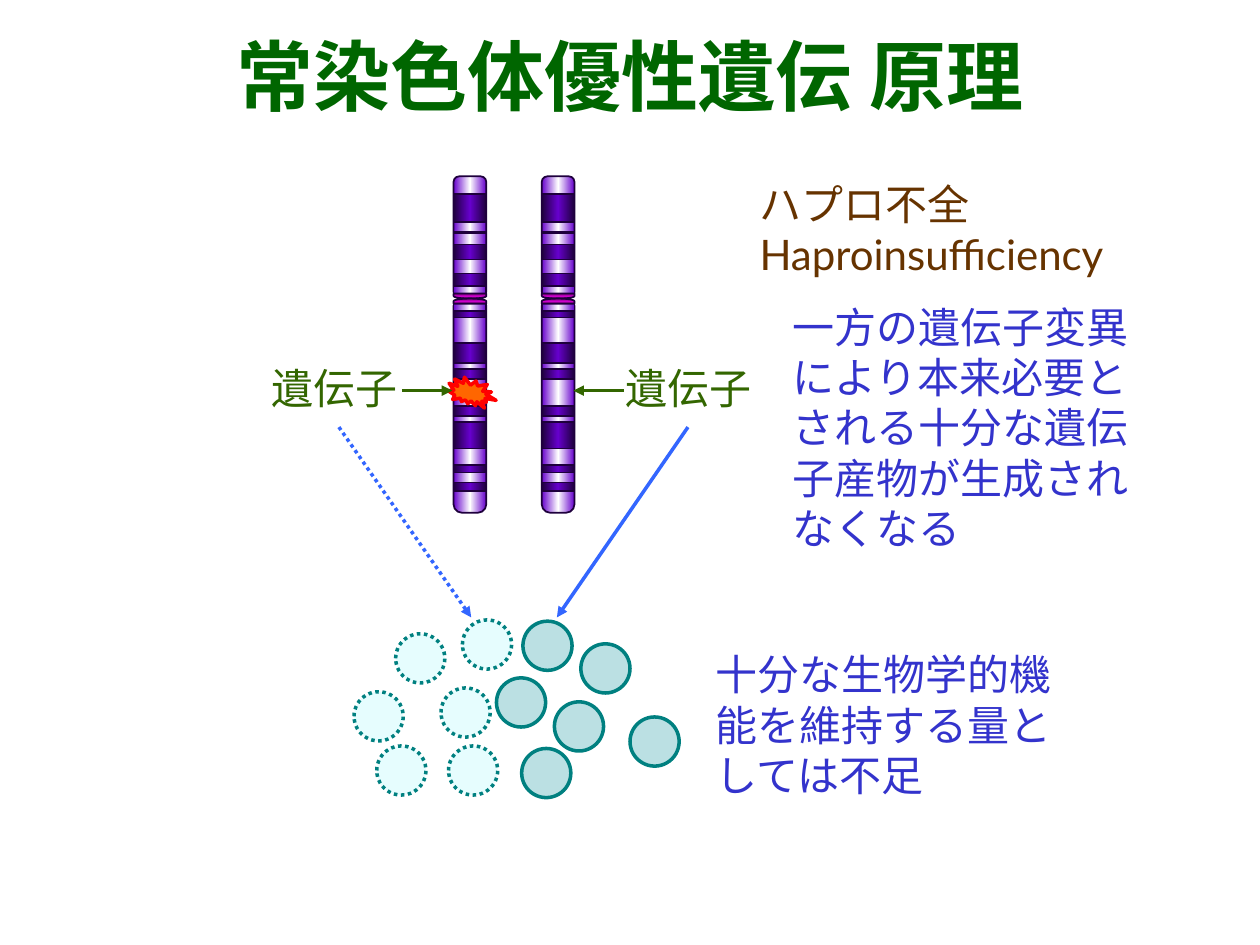
from copy import deepcopy

from lxml import etree
from pptx import Presentation
from pptx import util as u
from pptx.dml.color import RGBColor
from pptx.enum import dml, shapes, text
from pptx.oxml.ns import qn

Inches = u.Inches
SHAPE = shapes.MSO_SHAPE

TITLE_GREEN = RGBColor(0x00, 0x66, 0x00)
GENE_GREEN = RGBColor(0x33, 0x66, 0x00)
BROWN = RGBColor(0x66, 0x33, 0x00)
BLUE = RGBColor(0x33, 0x33, 0xCC)
ARROW_BLUE = RGBColor(0x33, 0x66, 0xFF)
VIOLET = RGBColor(0x66, 0x00, 0xCC)
WHITE = RGBColor(0xFF, 0xFF, 0xFF)
DARK = RGBColor(0x1E, 0x00, 0x3C)
PLUM = RGBColor(0x66, 0x00, 0x66)
MAGENTA = RGBColor(0xCC, 0x00, 0xCC)
ORANGE = RGBColor(0xFF, 0x66, 0x00)
RED = RGBColor(0xFF, 0x00, 0x00)
TEAL = RGBColor(0x00, 0x80, 0x80)
PRODUCT = RGBColor(0xBB, 0xE0, 0xE3)
MISSING = RGBColor(0xE6, 0xFD, 0xFE)

LIGHT_BAND = (VIOLET, WHITE)
DARK_BAND = (DARK, VIOLET)
CENTROMERE = (PLUM, MAGENTA)

CHROMOSOME_WIDTH = 0.26
LIGHT_BANDS = [(2.4, 0.09), (2.24, 0.09)]
DARK_BANDS = [
    (2.17, 0.1), (2.47, 0.05), (2.72, 0.16), (1.94, 0.12), (1.84, 0.01),
    (1.54, 0.22), (2.93, 0.08), (3.22, 0.08), (3.35, 0.21), (3.69, 0.06),
    (3.83, 0.07),
]
PRODUCTS = [(4.15, 4.93), (3.94, 5.38), (4.14, 5.94), (4.4, 5.57), (4.61, 5.11), (5, 5.69)]
MISSING_PRODUCTS = [(3.67, 4.92), (2.81, 5.49), (3.5, 5.46), (3.56, 5.92), (3.14, 5.03), (2.99, 5.92)]


class SlideBuilder:
    """Hold the slide and its style, and draw each kind of element on it."""

    font = "Noto Sans CJK JP"
    size = 24
    line_width = 2

    def __init__(self, s):
        self.s = s

    def run(self, p, words, color, font=None, size=None, bold=False):
        r = p.add_run()
        r.text = words
        r.font.name = font or self.font
        r.font.size = u.Pt(size or self.size)
        r.font.bold = bold
        r.font.color.rgb = color
        ea = etree.SubElement(r.font._element, qn("a:ea"))
        ea.set("typeface", self.font)

    def title(self, box, words):
        sp = self.s.shapes.title
        sp.left, sp.top, sp.width, sp.height = map(Inches, box)
        tf = sp.text_frame
        tf.auto_size = text.MSO_AUTO_SIZE.NONE
        tf.vertical_anchor = text.MSO_ANCHOR.MIDDLE
        p = tf.paragraphs[0]
        p.alignment = text.PP_ALIGN.CENTER
        self.run(p, words, TITLE_GREEN, size=44, bold=True)

    def textbox(self, box, lines, color, wrap=True, anchor=text.MSO_ANCHOR.MIDDLE):
        tf = self.s.shapes.add_textbox(*map(Inches, box)).text_frame
        tf.word_wrap = wrap
        tf.auto_size = text.MSO_AUTO_SIZE.SHAPE_TO_FIT_TEXT
        tf.vertical_anchor = anchor
        for i, (words, font) in enumerate(lines):
            p = tf.add_paragraph() if i else tf.paragraphs[0]
            self.run(p, words, color, font)

    def shape(self, kind, box, line, width=None, parent=None, rotation=0):
        sp = (parent or self.s).shapes.add_shape(kind, *map(Inches, box))
        sp.shadow.inherit = False
        sp.rotation = rotation
        sp.line.color.rgb = line
        sp.line.width = u.Pt(width or self.line_width)
        return sp

    def solid(self, kind, box, fill, line, dash=None, rotation=0):
        sp = self.shape(kind, box, line, rotation=rotation)
        sp.fill.solid()
        sp.fill.fore_color.rgb = fill
        if dash:
            sp.line.dash_style = dash

    def band(self, group, kind, box, colors, rotation=0, corner=None):
        sp = self.shape(kind, box, DARK, 1, group, rotation)
        if corner:
            sp.adjustments[0] = corner
        sp.fill.gradient()
        sp.fill.gradient_angle = 0
        stops = sp._element.spPr.find(qn("a:gradFill")).find(qn("a:gsLst"))
        stops.insert(1, deepcopy(stops[0]))
        edge, middle = colors
        for stop, color, place in zip(sp.fill.gradient_stops, (edge, middle, edge), (0, 0.5, 1)):
            stop.color.rgb = color
            stop.position = place

    def chromosome(self, x):
        group = self.s.shapes.add_group_shape()
        w = CHROMOSOME_WIDTH
        for y, h, corner in [(1.4, 0.96, 0.167), (2.36, 1.71, 0.26)]:
            self.band(group, SHAPE.ROUNDED_RECTANGLE, (x, y, w, h), LIGHT_BAND, corner=corner)
        for bands, colors in [(LIGHT_BANDS, LIGHT_BAND), (DARK_BANDS, DARK_BAND)]:
            for y, h in bands:
                self.band(group, SHAPE.RECTANGLE, (x, y, w, h), colors)
        for y, rotation in [(2.22, 90), (2.26, 270)]:
            self.band(group, SHAPE.FLOWCHART_DELAY, (x + 0.11, y, 0.04, w), CENTROMERE, rotation)

    def arrow(self, start, end, color, dash=None):
        c = self.s.shapes.add_connector(
            shapes.MSO_CONNECTOR.STRAIGHT, *map(Inches, (*start, *end)))
        c.line.color.rgb = color
        c.line.width = u.Pt(self.line_width)
        if dash:
            c.line.dash_style = dash
        spPr = c._element.spPr
        etree.SubElement(spPr.find(qn("a:ln")), qn("a:tailEnd")).set("type", "triangle")
        etree.SubElement(spPr, qn("a:effectLst"))

    def products(self, places, fill, dash=None):
        for x, y in places:
            self.solid(SHAPE.OVAL, (x, y, 0.39, 0.39), fill, TEAL, dash)


def main():
    prs = Presentation()
    prs.slide_width, prs.slide_height = Inches(10), Inches(7.5)
    b = SlideBuilder(prs.slides.add_slide(prs.slide_layouts[5]))
    dotted = dml.MSO_LINE.ROUND_DOT

    b.title((0.28, 0.2, 9.45, 0.79), "常染色体優性遺伝 原理")
    for x in (3.6, 4.3):
        b.chromosome(x)

    for x in (2.06, 4.87):
        b.textbox((x, 2.83, 1.2, 0.5), [("遺伝子", "Arial")], GENE_GREEN,
                  wrap=False, anchor=text.MSO_ANCHOR.TOP)
    b.arrow((4.95, 3.1), (4.55, 3.1), GENE_GREEN)
    b.solid(SHAPE.EXPLOSION2, (3.55, 3, 0.39, 0.24), ORANGE, RED, rotation=30)
    b.arrow((3.19, 3.1), (3.59, 3.1), GENE_GREEN)

    b.textbox((5.93, 1.36, 3.55, 0.91),
              [("ハプロ不全", None), ("Haproinsufficiency", "Lato")], BROWN)
    b.textbox((6.19, 2.34, 3.01, 2.1),
              [("一方の遺伝子変異により本来必要とされる十分な遺伝子産物が生成されなくなる", None)], BLUE)
    b.textbox((5.58, 5.1, 3.01, 1.3),
              [("十分な生物学的機能を維持する量としては不足", None)], BLUE)

    b.arrow((2.69, 3.39), (3.74, 4.9), ARROW_BLUE, dotted)
    b.arrow((5.46, 3.39), (4.42, 4.9), ARROW_BLUE)
    b.products(PRODUCTS, PRODUCT)
    b.products(MISSING_PRODUCTS, MISSING, dotted)

    prs.save("out.pptx")


if __name__ == "__main__":
    main()
